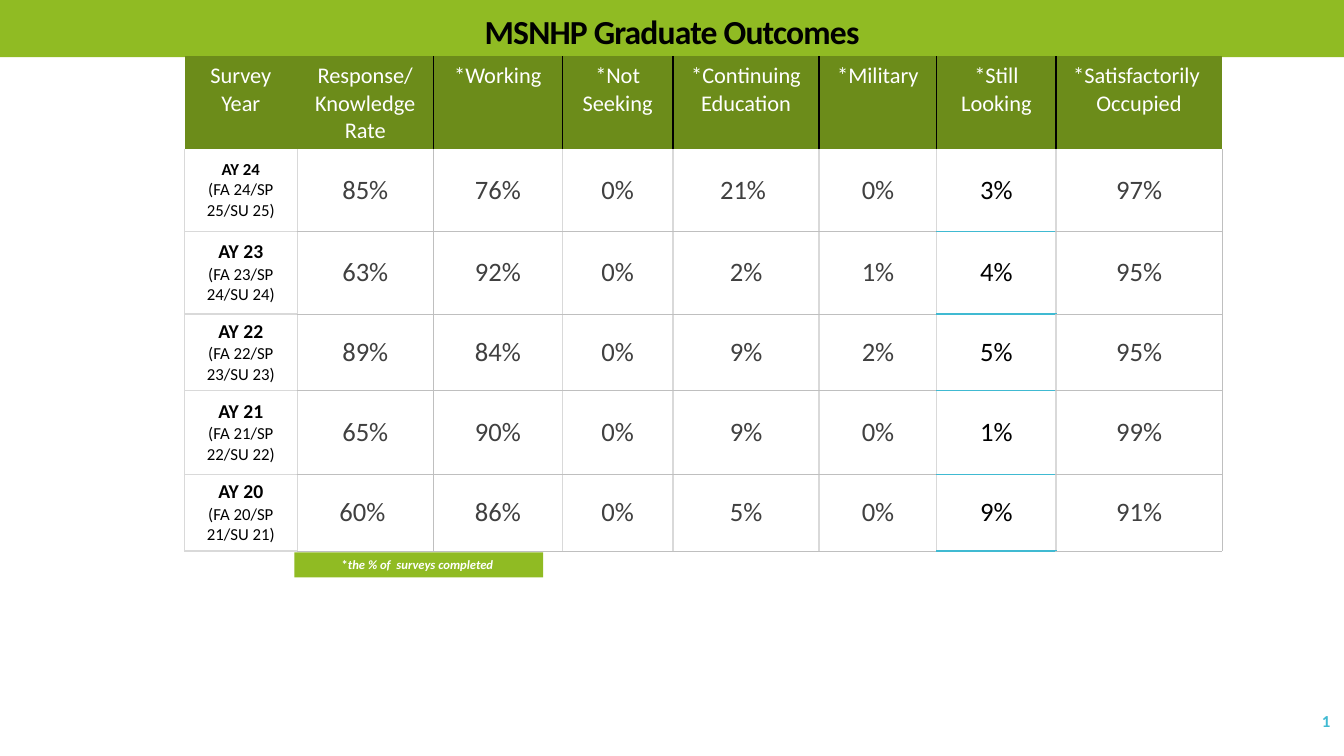
import pptx
import pptx.util
import pptx.dml.color
import pptx.enum.shapes
import pptx.enum.text
import lxml.etree
from pptx.util import Cm, Pt

COLORS = {
    "lime": "90BB23", "olive": "6C8C1A", "white": "FFFFFF", "black": "000000",
    "dark": "404040", "cyan": "40BAD2", "light": "D9D9D9", "gray": "BFBFBF",
}
MIDDLE = pptx.enum.text.MSO_ANCHOR.MIDDLE
CENTER = pptx.enum.text.PP_ALIGN.CENTER


def style(paragraph, size, color, bold=False, align=CENTER):
    paragraph.alignment = align
    font = paragraph.font
    font.name, font.size, font.bold = "Calibri", Pt(size), bold
    font.color.rgb = pptx.dml.color.RGBColor.from_string(COLORS[color])


def set_borders(cell, borders):
    """Draw each side given as (colour, points); clear the other sides."""
    properties = cell._tc.get_or_add_tcPr()
    for side in "LRTB":
        line = lxml.etree.SubElement(properties, pptx.oxml.ns.qn("a:ln" + side))
        if side in borders:
            color, points = borders[side]
            line.set("w", str(Pt(points)))
            fill = lxml.etree.SubElement(line, pptx.oxml.ns.qn("a:solidFill"))
            lxml.etree.SubElement(fill, pptx.oxml.ns.qn("a:srgbClr"), val=COLORS[color])
        else:
            lxml.etree.SubElement(line, pptx.oxml.ns.qn("a:noFill"))


presentation = pptx.Presentation()
presentation.slide_width, presentation.slide_height = Cm(33.87), Cm(19.05)
slide = presentation.slides.add_slide(presentation.slide_layouts[6])

# Slide number
number = slide.shapes.add_textbox(Cm(29.54), Cm(17.65), Cm(4.24), Cm(1.02))
number.text_frame.word_wrap = True
number.text_frame.vertical_anchor = MIDDLE
number.text_frame.text = "1"
style(number.text_frame.paragraphs[0], 12, "cyan", True, pptx.enum.text.PP_ALIGN.RIGHT)

# Title bar and footnote bar
bars = []
for left, top, width, height in [(0, 0, 33.87, 1.44), (7.42, 13.92, 6.27, 0.63)]:
    bar = slide.shapes.add_shape(pptx.enum.shapes.MSO_SHAPE.RECTANGLE,
                                 Cm(left), Cm(top), Cm(width), Cm(height))
    bar.shadow.inherit = False
    bar.fill.solid()
    bar.fill.fore_color.rgb = pptx.dml.color.RGBColor.from_string(COLORS["lime"])
    bar.line.fill.background()
    bar.text_frame.word_wrap = True
    bars.append(bar)
title, footnote = bars

title.text_frame.vertical_anchor = pptx.enum.text.MSO_ANCHOR.BOTTOM
heading = title.text_frame.paragraphs[0]
run = heading.add_run()
run.text = "MSNHP Graduate Outcomes"
run._r.get_or_add_rPr().set("spc", "-60")
style(heading, 24, "black", True)
heading.line_spacing = 0.9

footnote.text_frame.vertical_anchor = pptx.enum.text.MSO_ANCHOR.TOP
note = footnote.text_frame.paragraphs[0]
for text, italic in [("*", False), ("the % of  surveys completed ", True)]:
    run = note.add_run()
    run.text, run.font.italic = text, italic
style(note, 9, "white", True)

# Outcomes table
headers = ["Survey Year", "Response/\nKnowledge\nRate", "*Working", "*Not Seeking",
           "*Continuing Education", "*Military", "*Still Looking",
           "*Satisfactorily \nOccupied"]
outcomes = [
    ["AY 24\n(FA 24/SP 25/SU 25)", "85%", "76%", "0%", "21% ", "0%", "3%", "97%"],
    ["AY 23\n(FA 23/SP 24/SU 24)", "63%", "92%", "0%", "2%", "1%", "4%", "95%"],
    ["AY 22\n(FA 22/SP 23/SU 23)", "89%", "84%", "0%", "9%", "2%", "5%", "95%"],
    ["AY 21\n(FA 21/SP 22/SU 22)", "65%", "90%", "0%", "9%", "0%", "1%", "99%"],
    ["AY 20\n(FA 20/SP 21/SU 21)", "60% ", "86%", "0%", "5%", "0%", "9%", "91%"],
]
rows = [headers] + outcomes
widths = [2.84, 3.43, 3.25, 2.79, 3.68, 2.97, 3.0, 4.19]
heights = [1.91, 2.08, 2.08, 1.93, 2.11, 1.93]
YEAR, RESPONSE, WORKING, LOOKING, OCCUPIED = 0, 1, 2, 6, 7

table = slide.shapes.add_table(len(rows), len(headers), Cm(4.65), Cm(1.42),
                               Cm(sum(widths)), Cm(sum(heights))).table
table.first_row = table.horz_banding = False
for column, width in zip(table.columns, widths):
    column.width = Cm(width)
for row, height in zip(table.rows, heights):
    row.height = Cm(height)

for r, texts in enumerate(rows):
    for c, text in enumerate(texts):
        cell = table.cell(r, c)
        cell.margin_left = cell.margin_right = Cm(0.3)
        cell.margin_top = cell.margin_bottom = Cm(0.15)
        cell.text = text
        paragraphs = cell.text_frame.paragraphs

        # Text
        if r > 0:
            cell.vertical_anchor = MIDDLE
        for index, paragraph in enumerate(paragraphs):
            if r == 0:
                style(paragraph, 16, "white")
            elif c == YEAR:
                first = index == 0
                style(paragraph, 14 if first and r > 1 else 12, "black", first)
            else:
                style(paragraph, 19, "black" if c == LOOKING else "dark")

        # Borders
        if r == 0:
            borders = {}
            if c >= WORKING:
                borders["L"] = ("black", 1)
            if RESPONSE <= c < OCCUPIED:
                borders["R"] = ("black", 1)
        else:
            thin, thick = ("gray", 0.25), ("light", 1)
            level = {YEAR: thick, LOOKING: ("cyan", 1)}.get(c, thin)
            borders = {"L": thin if c == WORKING else thick,
                       "R": thin if c in (RESPONSE, OCCUPIED) else thick,
                       "B": level}
            if r > 1:
                borders["T"] = level
        set_borders(cell, borders)

        cell.fill.solid()
        cell.fill.fore_color.rgb = pptx.dml.color.RGBColor.from_string(
            COLORS["white" if r else "olive"])

presentation.save("out.pptx")
